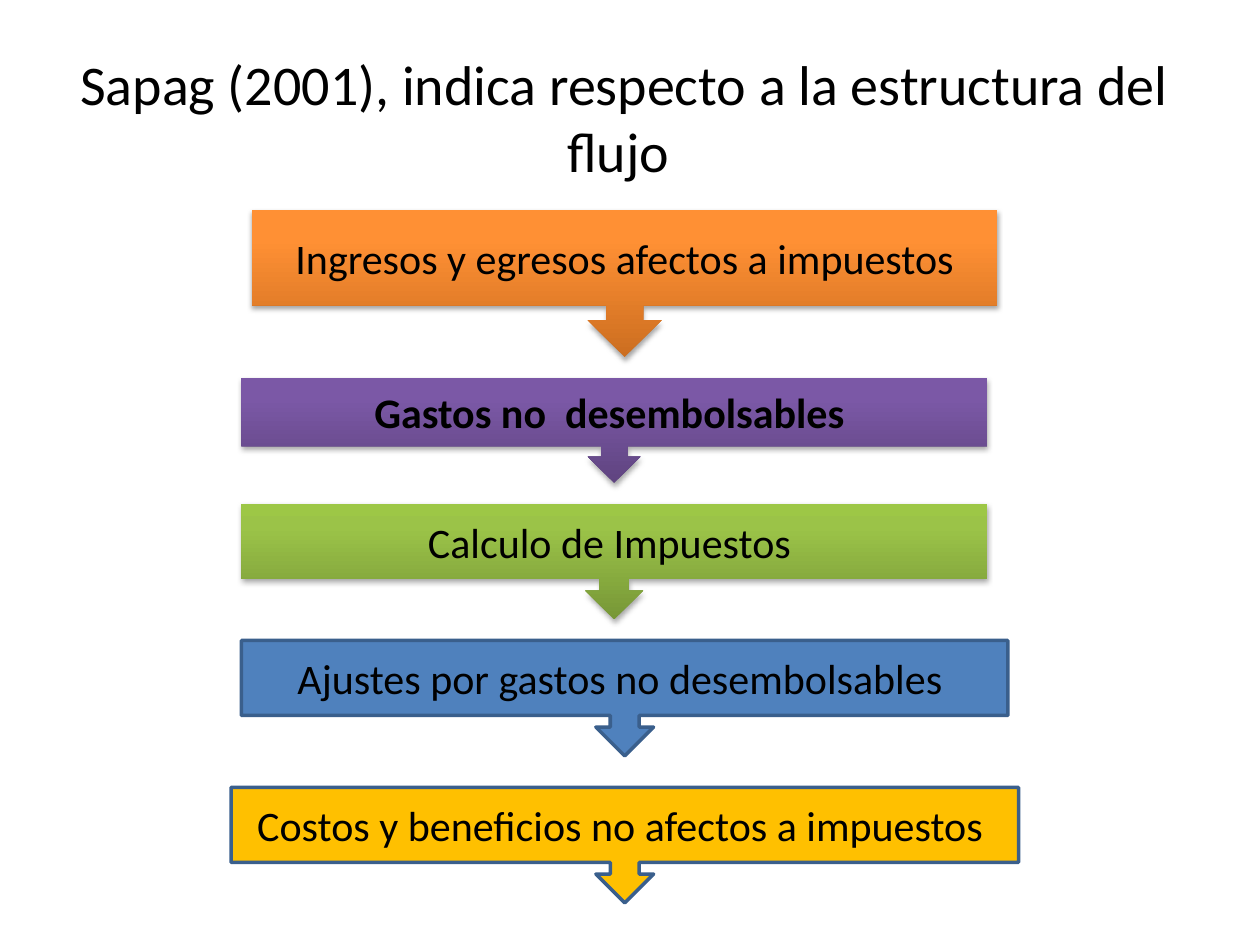
from copy import deepcopy
from dataclasses import dataclass

from lxml import etree
from pptx import Presentation
from pptx.dml.color import RGBColor
from pptx.enum.shapes import MSO_SHAPE
from pptx.enum.text import MSO_ANCHOR, PP_ALIGN
from pptx.oxml.ns import qn
from pptx.util import Inches, Pt

CALLOUT = MSO_SHAPE.DOWN_ARROW_CALLOUT
MIDDLE = MSO_ANCHOR.MIDDLE
CENTER = PP_ALIGN.CENTER


@dataclass(frozen=True)
class Theme:
    font: str = "Calibri"
    title_size: int = 32
    step_size: int = 24
    text: str = "000000"
    border: str = "3A5F8C"
    border_width: int = 2
    # Gradients run from the bottom edge to the top edge
    orange: tuple = ("CC6E20", "FF9034", "FF9136")
    purple: tuple = ("5F4480", "7B58A6", "7C57A8")
    green: tuple = ("779737", "9BC348", "9DC746")
    stops: tuple = (0, 0.8, 1)
    blue: str = "4F81BD"
    yellow: str = "FFC000"


class Deck:
    """Places elements on a grid of twelve units to the inch."""

    def __init__(self, prs, theme):
        self.theme = theme
        self.s = prs.slides.add_slide(prs.slide_layouts[6])

    def box(self, *units):
        return [Inches(u / 12) for u in units]

    def label(self, sp, text, size, bold=False):
        tf = sp.text_frame
        tf.word_wrap = True
        tf.vertical_anchor = MIDDLE
        p = tf.paragraphs[0]
        p.text = text
        p.alignment = CENTER
        p.font.name = self.theme.font
        p.font.size = Pt(size)
        p.font.bold = bold
        p.font.color.rgb = RGBColor.from_string(self.theme.text)

    def title(self, text, *units):
        sp = self.s.shapes.add_textbox(*self.box(*units))
        self.label(sp, text, self.theme.title_size)

    def step(self, text, fill, *units, bold=False):
        sp = self.s.shapes.add_shape(CALLOUT, *self.box(*units))
        sp.shadow.inherit = False
        if isinstance(fill, tuple):
            self.gradient(sp, fill)
            sp.line.fill.background()
            self.shadow(sp)
        else:
            sp.fill.solid()
            sp.fill.fore_color.rgb = RGBColor.from_string(fill)
            sp.line.color.rgb = RGBColor.from_string(self.theme.border)
            sp.line.width = Pt(self.theme.border_width)
        self.label(sp, text, self.theme.step_size, bold)

    def gradient(self, sp, colors):
        sp.fill.gradient()
        sp.fill.gradient_angle = 90
        stop_list = sp._element.spPr.find(".//" + qn("a:gsLst"))
        stop_list.append(deepcopy(stop_list[-1]))
        for stop, position, color in zip(sp.fill.gradient_stops, self.theme.stops, colors):
            stop.position = position
            stop.color.rgb = RGBColor.from_string(color)

    def shadow(self, sp):
        effects = sp._element.spPr.find(qn("a:effectLst"))
        outer = etree.SubElement(effects, qn("a:outerShdw"), blurRad=str(Pt(3.1)),
                                 dist=str(Pt(1.8)), dir="5400000", rotWithShape="0")
        color = etree.SubElement(outer, qn("a:srgbClr"), val="000000")
        etree.SubElement(color, qn("a:alpha"), val="35000")


def main():
    prs = Presentation()
    prs.slide_width, prs.slide_height = Inches(10), Inches(7.5)
    theme = Theme()
    deck = Deck(prs, theme)

    # Heading
    deck.title("Sapag (2001), indica respecto a la estructura del flujo ", 2, 3.6, 115, 15)

    # Cash flow steps, top to bottom: left, top, width, height in grid units
    deck.step("Ingresos y egresos afectos a impuestos", theme.orange, 24, 20, 71, 14)
    deck.step("Gastos no  desembolsables ", theme.purple, 23, 36, 71, 10, bold=True)
    deck.step("Calculo de Impuestos ", theme.green, 23, 48, 71, 11)
    deck.step("Ajustes por gastos no desembolsables ", theme.blue, 23, 61, 73, 11)
    deck.step("Costos y beneficios no afectos a impuestos ", theme.yellow, 22, 75, 75, 11)

    prs.save("out.pptx")


if __name__ == "__main__":
    main()
